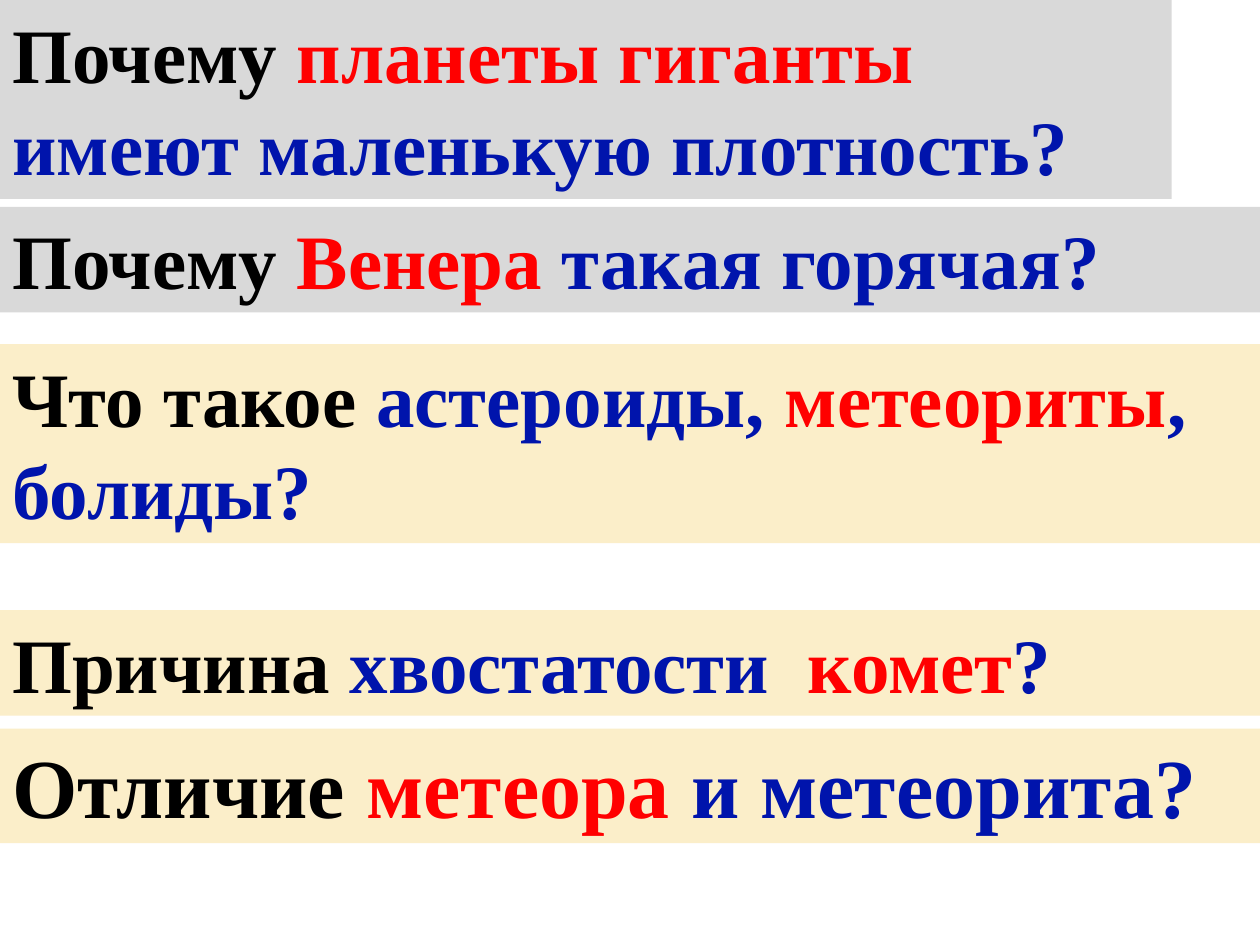
from pptx import Presentation, util as u
from pptx.dml.color import RGBColor
from pptx.enum import text

BLACK, RED, BLUE = "000000", "FF0000", "0014AC"
GREY, CREAM = "D9D9D9", "FBEEC9"


def tint(code):
    return RGBColor.from_string(code)


class Deck:
    font = {"name": "Times New Roman", "bold": True}
    frame = {"word_wrap": True, "auto_size": text.MSO_AUTO_SIZE.SHAPE_TO_FIT_TEXT}

    def __init__(self, wide, high):
        self.file = Presentation()
        self.file.slide_width, self.file.slide_height = u.Cm(wide), u.Cm(high)
        self.slide = self.file.slides.add_slide(self.file.slide_layouts[6])

    def band(self, top, wide, high, fill, size, runs):
        """Add a filled strip from the left edge holding one question."""
        box = self.slide.shapes.add_textbox(0, u.Cm(top), u.Cm(wide), u.Cm(high))
        box.fill.solid()
        box.fill.fore_color.rgb = tint(fill)
        for key, value in self.frame.items():
            setattr(box.text_frame, key, value)
        line = box.text_frame.paragraphs[0]
        for words, hue in runs:
            run = line.add_run()
            run.text = words
            for key, value in {**self.font, "size": u.Pt(size)}.items():
                setattr(run.font, key, value)
            run.font.color.rgb = tint(hue)


def main():
    deck = Deck(25.4, 19.05)
    bands = [
        (0, 23.62, 4.01, GREY, 44,
         [("Почему ", BLACK), ("планеты гиганты ", RED),
          ("имеют маленькую плотность?", BLUE)]),
        (4.17, 25.4, 2.13, GREY, 44,
         [("Почему ", BLACK), ("Венера", RED), (" такая горячая?", BLUE)]),
        (6.94, 25.4, 4.01, CREAM, 44,
         [("Что такое ", BLACK), ("астероиды, ", BLUE), ("метеориты", RED),
          (", болиды?", BLUE)]),
        (12.3, 25.4, 2.13, CREAM, 44,
         [("Причина ", BLACK), ("хвостатости  ", BLUE), ("комет", RED),
          ("?", BLUE)]),
        (14.69, 25.4, 2.31, CREAM, 48,
         [("Отличие ", BLACK), ("метеора", RED), (" и метеорита?", BLUE)]),
    ]
    for band in bands:
        deck.band(*band)
    deck.file.save("out.pptx")


if __name__ == "__main__":
    main()
